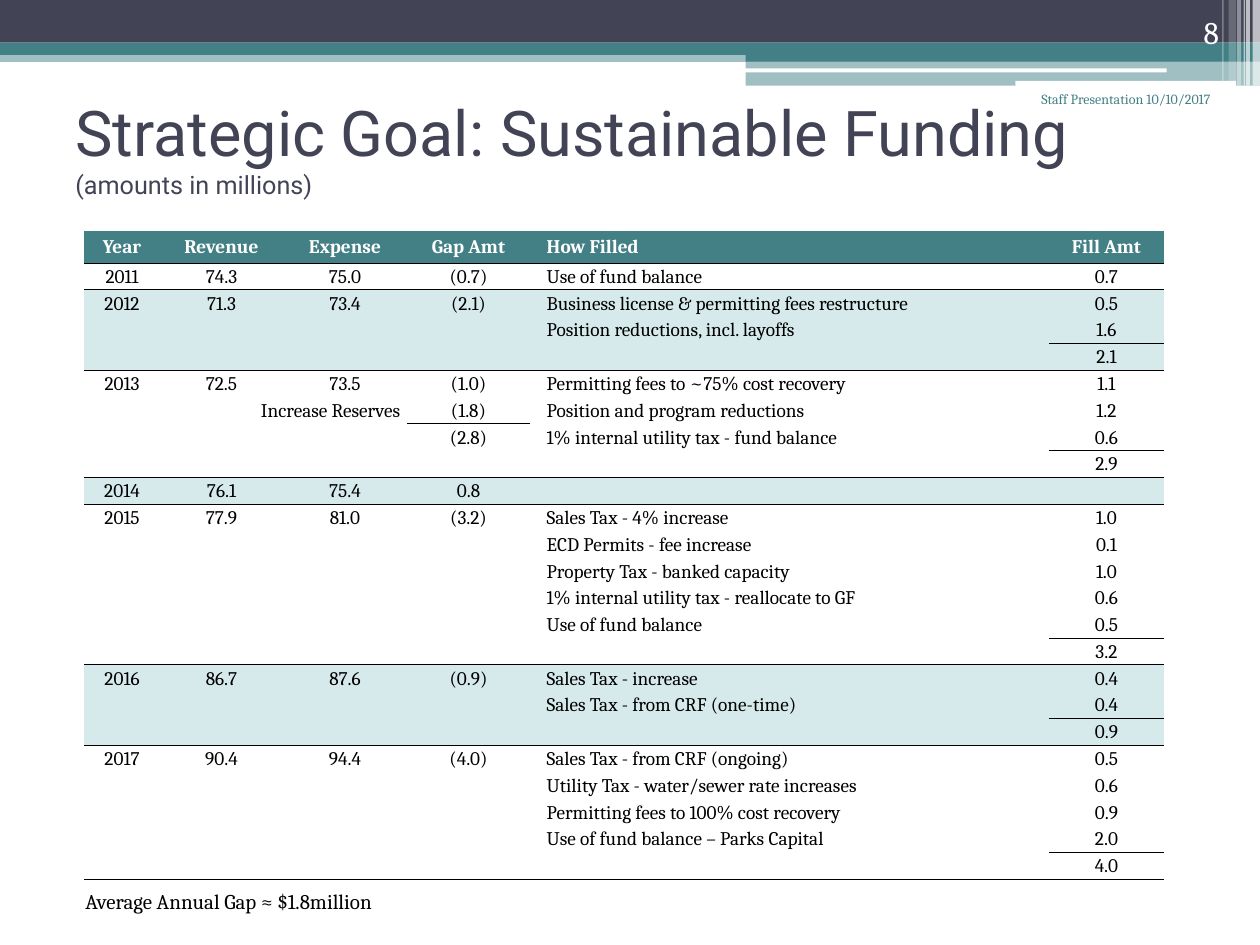
from lxml.etree import SubElement
from pptx import Presentation
from pptx.dml.color import RGBColor
from pptx.enum.shapes import MSO_SHAPE as Shape
from pptx.enum.text import MSO_ANCHOR as Anchor, PP_ALIGN as Align
from pptx.oxml.ns import qn
from pptx.util import Cm, Pt

NAVY, TEAL, PALE, WHITE, BLACK = "424456", "438086", "D6E9EB", "FFFFFF", "000000"
NO_STYLE_NO_GRID = "{2D5ABB26-0587-4C30-8999-92F81FD0307C}"

HEADINGS = ["Year", "Revenue", "Expense", "Gap Amt", "", "How Filled", "Fill Amt"]
COLUMN_WIDTHS = [1.52, 2.49, 2.49, 2.49, 0.3, 10.16, 2.31]
HEADER_HEIGHT, ROW_HEIGHT = 0.65, 0.54
REVENUE_COL, EXPENSE_COL, GAP_COL, HOW_COL, FILL_COL = 1, 2, 3, 5, 6

# Year, revenue, expense, gap lines, (how filled, amount) lines
YEARS = [
    ("2011", "74.3", "75.0", ["(0.7)"], [("Use of fund balance", "0.7")]),
    ("2012", "71.3", "73.4", ["(2.1)"], [
        ("Business license & permitting fees restructure", "0.5"),
        ("Position reductions, incl. layoffs", "1.6"),
        ("", "2.1")]),
    ("2013", "72.5", "73.5", ["(1.0)", "(1.8)", "(2.8)"], [
        ("Permitting fees to ~75% cost recovery", "1.1"),
        ("Position and program reductions", "1.2"),
        ("1% internal utility tax - fund balance", "0.6"),
        ("", "2.9")]),
    ("2014", "76.1", "75.4", ["0.8"], [("", "")]),
    ("2015", "77.9", "81.0", ["(3.2)"], [
        ("Sales Tax - 4% increase", "1.0"),
        ("ECD Permits - fee increase", "0.1"),
        ("Property Tax - banked capacity", "1.0"),
        ("1% internal utility tax - reallocate to GF", "0.6"),
        ("Use of fund balance", "0.5"),
        ("", "3.2")]),
    ("2016", "86.7", "87.6", ["(0.9)"], [
        ("Sales Tax - increase", "0.4"),
        ("Sales Tax - from CRF (one-time)", "0.4"),
        ("", "0.9")]),
    ("2017", "90.4", "94.4", ["(4.0)"], [
        ("Sales Tax - from CRF (ongoing)", "0.5"),
        ("Utility Tax - water/sewer rate increases", "0.6"),
        ("Permitting fees to 100% cost recovery", "0.9"),
        ("Use of fund balance – Parks Capital", "2.0"),
        ("", "4.0")]),
]


def color(value):
    return RGBColor.from_string(value)


class SlideBuilder:
    body_font, title_font, table_size = "Cambria", "Roboto", 11

    def __init__(self, page):
        self.page = page

    def style(self, font, size, ink, name=None, bold=False):
        font.name, font.size, font.bold = name or self.body_font, Pt(size), bold
        font.color.rgb = color(ink)

    def band(self, left, top, width, height, fill, opacity=100, kind=Shape.RECTANGLE):
        box = self.page.shapes.add_shape(kind, Cm(left), Cm(top), Cm(width), Cm(height))
        box.shadow.inherit = False
        box.line.fill.background()
        box.fill.solid()
        box.fill.fore_color.rgb = color(fill)
        if opacity < 100:
            rgb = box.fill._xPr.find(".//" + qn("a:srgbClr"))
            SubElement(rgb, qn("a:alpha"), val=str(opacity * 1000))

    def frame(self, left, top, width, height, anchor=Anchor.TOP):
        box = self.page.shapes.add_textbox(Cm(left), Cm(top), Cm(width), Cm(height))
        box.text_frame.word_wrap = True
        box.text_frame.vertical_anchor = anchor
        return box.text_frame

    def label(self, frame, text, size, ink, align=Align.LEFT):
        para = frame.paragraphs[0]
        para.text, para.alignment = text, align
        self.style(para.font, size, ink)

    def title(self, frame, text, subtitle):
        para = frame.paragraphs[0]
        for part, size in ((text, 36), (subtitle, 14.4)):
            if para.runs:
                para.add_line_break()
            span = para.add_run()
            span.text = part
            self.style(span.font, size, NAVY, self.title_font)

    def table(self, left, top, widths, row_count):
        height = HEADER_HEIGHT + ROW_HEIGHT * (row_count - 1)
        shape = self.page.shapes.add_table(
            row_count, len(widths), Cm(left), Cm(top), Cm(sum(widths)), Cm(height))
        grid = shape.table
        grid._tbl.tblPr.find(qn("a:tableStyleId")).text = NO_STYLE_NO_GRID
        grid.horz_banding = False
        for column, width in zip(grid.columns, widths):
            column.width = Cm(width)
        for index, row in enumerate(grid.rows):
            row.height = Cm(ROW_HEIGHT if index else HEADER_HEIGHT)
        return grid

    def cell(self, cell, text, align, fill=None, ink=BLACK, bold=False, underline=False):
        cell.margin_left = cell.margin_right = cell.margin_top = Cm(0.03)
        cell.margin_bottom = 0
        cell.vertical_anchor = Anchor.MIDDLE
        para = cell.text_frame.paragraphs[0]
        para.alignment = align
        if text:
            para.text = text
            self.style(para.font, self.table_size, ink, bold=bold)
        else:
            # Keeps an empty cell from stretching its row
            SubElement(para._p, qn("a:endParaRPr"), sz=str(self.table_size * 100))
        if underline:
            line = SubElement(cell._tc.get_or_add_tcPr(), qn("a:lnB"), w=str(Pt(0.5)))
            SubElement(SubElement(line, qn("a:solidFill")), qn("a:srgbClr"), val=BLACK)
        if fill:
            cell.fill.solid()
            cell.fill.fore_color.rgb = color(fill)
        else:
            cell.fill.background()


def add_banner(builder):
    # Full-width bands
    builder.band(0, 1.02, 25.4, 0.23, TEAL, 50)
    builder.band(0, 0, 25.4, 0.86, NAVY)
    builder.band(0, 0.86, 25.4, 0.25, TEAL)
    # Right-hand step
    builder.band(15.03, 0.99, 10.37, 0.25, TEAL)
    builder.band(15.03, 1.23, 10.37, 0.5, TEAL, 50)
    builder.band(15.01, 1.38, 8.51, 0.08, WHITE, kind=Shape.ROUNDED_RECTANGLE)
    builder.band(20.47, 1.63, 4.45, 0.1, WHITE, kind=Shape.ROUNDED_RECTANGLE)
    # Translucent stripes
    for left, width, height, opacity in (
            (25.25, 0.15, 1.73, 65), (25.12, 0.08, 1.73, 65), (25.07, 0.03, 1.73, 60),
            (24.94, 0.08, 1.73, 40), (24.77, 0.15, 1.63, 20), (24.64, 0.03, 1.63, 30)):
        builder.band(left, 0, width, height, WHITE, opacity)


def add_funding_table(builder):
    row_count = 1 + sum(len(fills) for *_, fills in YEARS)
    grid = builder.table(1.7, 4.65, COLUMN_WIDTHS, row_count)
    aligns = [Align.LEFT if col == HOW_COL else Align.CENTER for col in range(len(HEADINGS))]

    for col, heading in enumerate(HEADINGS):
        builder.cell(grid.cell(0, col), heading, aligns[col], TEAL, WHITE, True, True)

    row = 1
    for number, (year, revenue, expense, gaps, fills) in enumerate(YEARS):
        fill = PALE if number % 2 else None
        last = len(fills) - 1
        for line, (how, amount) in enumerate(fills):
            gap = gaps[line] if line < len(gaps) else ""
            start = [year, revenue, expense] if line == 0 else ["", "", ""]
            # Rules close each year and sit above each total
            ruled = {GAP_COL} if line == len(gaps) - 2 else set()
            if line == last - 1:
                ruled.add(FILL_COL)
            for col, text in enumerate(start + [gap, "", how, amount]):
                if year == "2013" and line == 1 and col == REVENUE_COL:
                    reserves = grid.cell(row, col)
                    reserves.merge(grid.cell(row, EXPENSE_COL))
                    builder.cell(reserves, "Increase Reserves", Align.RIGHT)
                    reserves.margin_right = Cm(0.13)
                else:
                    builder.cell(grid.cell(row, col), text, aligns[col], fill,
                                 underline=line == last or col in ruled)
            row += 1


def main():
    deck = Presentation()
    deck.slide_width, deck.slide_height = Cm(25.4), Cm(19.05)
    builder = SlideBuilder(deck.slides.add_slide(deck.slide_layouts[6]))

    add_banner(builder)

    # Title and page number
    builder.title(builder.frame(1.27, 2.11, 22.86, 1.7, Anchor.MIDDLE),
                  "Strategic Goal: Sustainable Funding", "(amounts in millions)")
    number = builder.frame(22.71, 0, 2.11, 1.02, Anchor.BOTTOM)
    number.margin_bottom = 0
    builder.label(number, "8", 18, WHITE, Align.RIGHT)

    add_funding_table(builder)

    # Footnote and date
    builder.label(builder.frame(1.47, 17.78, 7.19, 0.76),
                  "Average Annual Gap ≈ $1.8million", 12, BLACK)
    builder.label(builder.frame(17.98, 1.7, 6.68, 0.64),
                  "Staff Presentation 10/10/2017", 8, TEAL, Align.RIGHT)

    deck.save("out.pptx")


if __name__ == "__main__":
    main()
